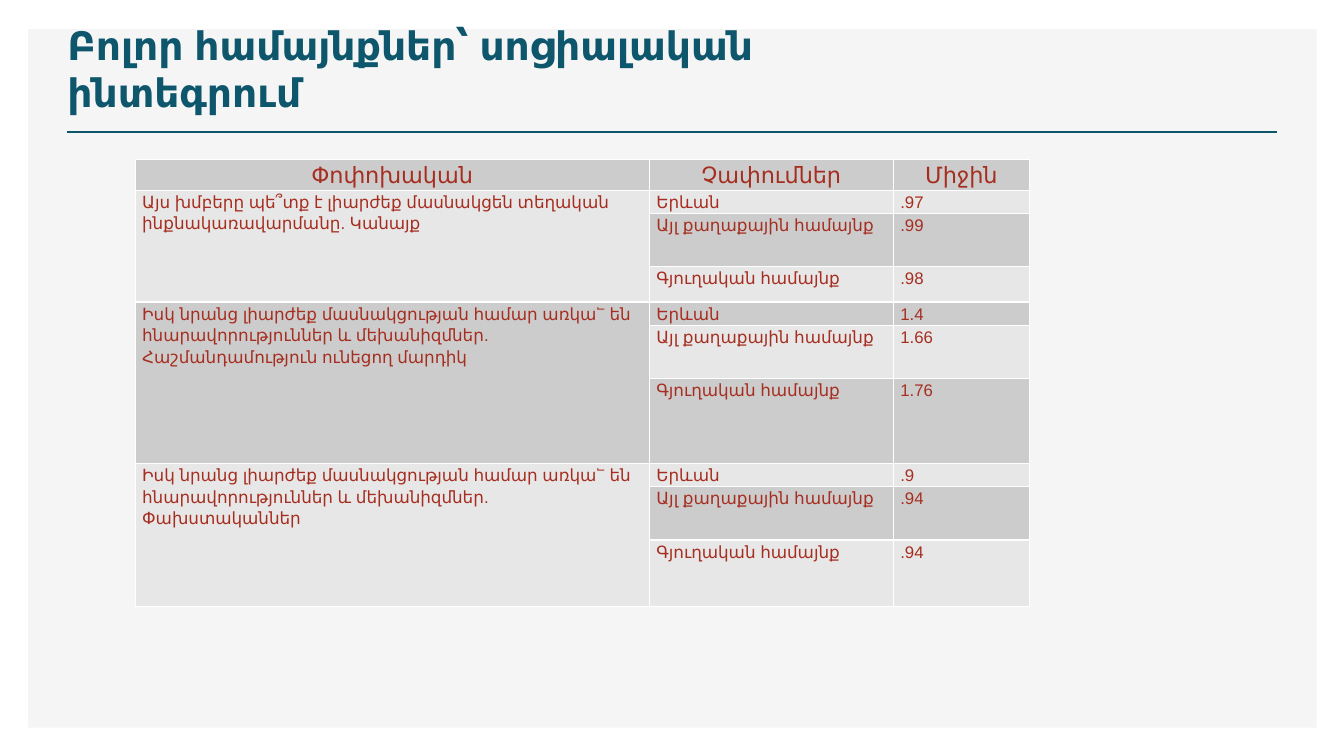
from lxml.etree import SubElement
from pptx import Presentation
from pptx.dml.color import RGBColor
from pptx.enum.shapes import MSO_CONNECTOR as CONN, MSO_SHAPE as SHAPE
from pptx.enum.text import MSO_ANCHOR as ANCHOR, PP_ALIGN as ALIGN
from pptx.oxml.ns import qn
from pptx.util import Inches, Pt

TEAL, RED, WHITE = "0E566C", "A62E20", "FFFFFF"
PANEL, DARK, LIGHT = "F5F5F5", "CCCCCC", "E7E7E7"

HEADERS = ["Փոփոխական", "Չափումներ", "Միջին"]
COMMUNITIES = ["Երևան", "Այլ քաղաքային համայնք", "Գյուղական համայնք"]
MECHANISMS = ("Իսկ նրանց լիարժեք մասնակցության համար առկա՟ են "
              "հնարավորություններ և մեխանիզմներ. ")
QUESTIONS = [
    ("Այս խմբերը պե՞տք է լիարժեք մասնակցեն տեղական ինքնակառավարմանը. Կանայք",
     [".97", ".99", ".98"]),
    (MECHANISMS + "Հաշմանդամություն ունեցող մարդիկ", ["1.4", "1.66", "1.76"]),
    (MECHANISMS + "Փախստականներ", [".9", ".94", ".94"]),
]
COL_WIDTHS = [5.1, 2.42, 1.35]
ROW_HEIGHTS = [0.18, 0.18, 0.53, 0.35, 0.18, 0.53, 0.84, 0.18, 0.53, 0.66]


def rgb(color):
    return RGBColor.from_string(color)


def set_attrs(obj, values):
    for name, value in values.items():
        setattr(obj, name, value)


def write(p, text, size, color, bold=False):
    r = p.add_run()
    r.text = text
    set_attrs(r.font, {"name": "Arial", "size": Pt(size), "bold": bold})
    r.font.color.rgb = rgb(color)


def add_panel(s, box, color):
    sp = s.shapes.add_shape(SHAPE.RECTANGLE, *map(Inches, box))
    sp.shadow.inherit = False
    sp.fill.solid()
    sp.fill.fore_color.rgb = rgb(color)
    sp.line.fill.background()


def add_rule(s, left, right, y, color, width):
    line = s.shapes.add_connector(CONN.STRAIGHT, Inches(left), Inches(y),
                                  Inches(right), Inches(y))
    line.line.color.rgb = rgb(color)
    line.line.width = Pt(width)
    SubElement(line._element.spPr, qn("a:effectLst"))


def add_title(s, box, text):
    tf = s.shapes.add_textbox(*map(Inches, box)).text_frame
    set_attrs(tf, {"word_wrap": True, "vertical_anchor": ANCHOR.BOTTOM})
    write(tf.paragraphs[0], text, 28, TEAL, bold=True)


def style_cell(cell, fill):
    set_attrs(cell, {"margin_left": Inches(0.07), "margin_right": Inches(0.07),
                     "margin_top": 0, "margin_bottom": 0})
    tc_pr = cell._tc.get_or_add_tcPr()
    for side in ("lnL", "lnR", "lnT", "lnB"):
        ln = SubElement(tc_pr, qn("a:" + side), w=str(Pt(1)))
        SubElement(SubElement(ln, qn("a:solidFill")), qn("a:srgbClr"), val=WHITE)
    cell.fill.solid()
    cell.fill.fore_color.rgb = rgb(fill)


def fill_cell(cell, text, size=12, align=ALIGN.LEFT):
    p = cell.text_frame.paragraphs[0]
    set_attrs(p, {"alignment": align, "line_spacing": 1.15,
                  "space_after": Pt(10)})
    write(p, text, size, RED)


def add_results(s, left, top):
    frame = s.shapes.add_table(len(ROW_HEIGHTS), len(COL_WIDTHS),
                               Inches(left), Inches(top),
                               Inches(sum(COL_WIDTHS)), Inches(sum(ROW_HEIGHTS)))
    table = frame.table
    for col, width in zip(table.columns, COL_WIDTHS):
        col.width = Inches(width)
    # Alternating row bands
    for i, (row, height) in enumerate(zip(table.rows, ROW_HEIGHTS)):
        row.height = Inches(height)
        for cell in row.cells:
            style_cell(cell, LIGHT if i % 2 else DARK)
    # Header row
    for c, header in enumerate(HEADERS):
        fill_cell(table.cell(0, c), header, 16, ALIGN.CENTER)
    # One merged question beside its three communities
    span = len(COMMUNITIES)
    for q, (question, means) in enumerate(QUESTIONS):
        first = 1 + q * span
        table.cell(first, 0).merge(table.cell(first + span - 1, 0))
        fill_cell(table.cell(first, 0), question)
        for r, (community, mean) in enumerate(zip(COMMUNITIES, means), first):
            fill_cell(table.cell(r, 1), community)
            fill_cell(table.cell(r, 2), mean)


def main():
    prs = Presentation()
    set_attrs(prs, {"slide_width": Inches(13.33), "slide_height": Inches(7.5)})
    s = prs.slides.add_slide(prs.slide_layouts[6])
    # Backdrop and title
    add_panel(s, (0.28, 0.29, 12.78, 6.93), PANEL)
    add_rule(s, 0.66, 12.67, 1.31, TEAL, 2)
    add_title(s, (0.57, 0.49, 8.65, 0.7),
              "Բոլոր համայնքներ՝ սոցիալական ինտեգրում")
    # Results table
    add_results(s, 1.34, 1.58)
    prs.save("out.pptx")


if __name__ == "__main__":
    main()
